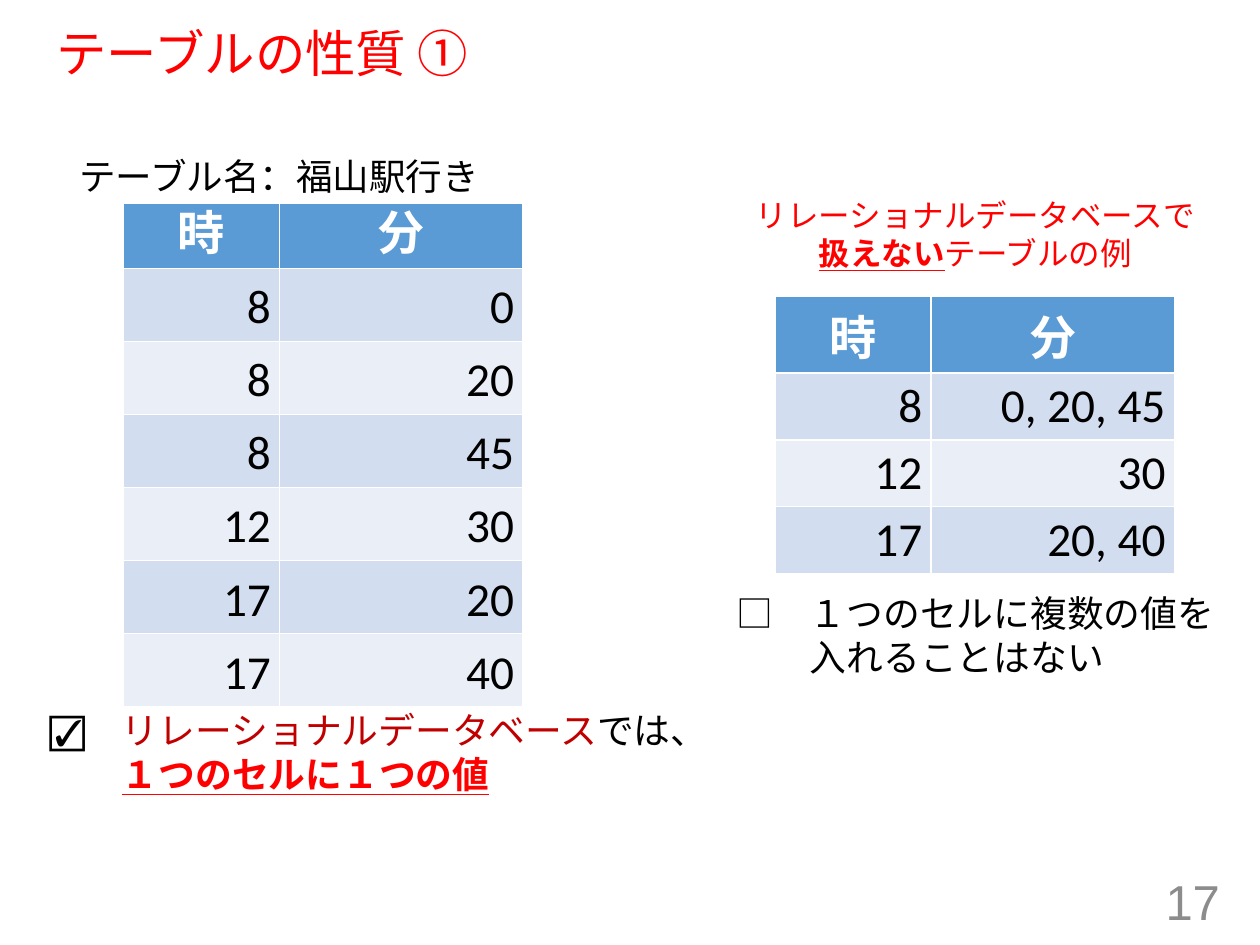
"""Build a slide on the single-value property of relational tables."""
from pptx import Presentation
from pptx.dml.color import RGBColor
from pptx.enum.text import MSO_ANCHOR, PP_ALIGN
from pptx.oxml.ns import qn
from pptx.util import Inches, Pt
from lxml import etree

LEFT, CENTER, RIGHT = PP_ALIGN.LEFT, PP_ALIGN.CENTER, PP_ALIGN.RIGHT
TOP, MIDDLE = MSO_ANCHOR.TOP, MSO_ANCHOR.MIDDLE
BLACK = RGBColor(0x00, 0x00, 0x00)
WHITE = RGBColor(0xFF, 0xFF, 0xFF)
RED = RGBColor(0xFF, 0x00, 0x00)
DARK_RED = RGBColor(0xC0, 0x00, 0x00)
GRAY = RGBColor(0x8C, 0x8C, 0x8C)
HEADER_BLUE = RGBColor(0x5B, 0x9B, 0xD5)
BANDS = [RGBColor(0xD2, 0xDE, 0xEF), RGBColor(0xEA, 0xEF, 0xF7)]
CJK = "Noto Sans CJK JP"


def add_span(para, text, size, font, color, strong=False, underline=False):
    span = para.add_run()
    span.text = text
    span.font.size = Pt(size)
    span.font.name = font
    span.font.bold = strong
    span.font.underline = underline
    span.font.color.rgb = color
    east_asian = etree.SubElement(span.font._element, qn("a:ea"))
    east_asian.set("typeface", CJK)


def add_box(place, lines, size, font, align=LEFT, anchor=TOP):
    box = slide.shapes.add_textbox(*(Inches(length) for length in place))
    frame = box.text_frame
    frame.word_wrap = True
    frame.vertical_anchor = anchor
    for index, line in enumerate(lines):
        para = frame.add_paragraph() if index else frame.paragraphs[0]
        para.alignment = align
        for text, color, *style in line:
            add_span(para, text, size, font, color, *style)
    return frame


deck = Presentation()
deck.slide_width = Inches(10)
deck.slide_height = Inches(7.5)
slide = deck.slides.add_slide(deck.slide_layouts[6])

title = add_box((0.35, 0.19, 9.25, 0.51), [[("テーブルの性質 ①", RED)]],
                28.8, "Arial", anchor=MIDDLE)
title.paragraphs[0].line_spacing = 0.9
add_box((7.53, 6.95, 2.25, 0.4), [[("17", GRAY)]], 28, "Arial", RIGHT, MIDDLE)

caption = add_box((0.56, 1.28, 3.57, 0.57), [[("テーブル名：福山駅行き", BLACK)]], 20.9, CJK)
caption.margin_left = caption.margin_right = Inches(0.07)
caption.margin_top = caption.margin_bottom = Inches(0.04)
caption.paragraphs[0].line_spacing = 0.7
caption.paragraphs[0].space_before = Pt(10)

add_box((5.87, 1.51, 3.74, 0.71),
        [[("リレーショナルデータベースで", RED)],
         [("扱えない", RED, True, True), ("テーブルの例", RED)]],
        18, "Calibri", CENTER)

forbidden_note = add_box((5.75, 4.64, 4.03, 0.81),
                         [[("□\t", BLACK), ("１つのセルに複数の値を", BLACK)],
                          [("入れることはない", BLACK)]], 21, CJK)
rule_note = add_box((0.29, 5.57, 5.6, 0.81),
                    [[("☑\t", BLACK), ("リレーショナルデータベース", DARK_RED), ("では、", BLACK)],
                     [("１つのセルに１つの値", RED, True, True)]], 21, CJK)
for note in (forbidden_note, rule_note):
    for para, indent in zip(note.paragraphs, (-0.58, 0)):
        properties = para._p.get_or_add_pPr()
        properties.set("marL", str(Inches(0.58)))
        properties.set("indent", str(Inches(indent)))

HEADINGS = ("時", "分")
timetable = [HEADINGS, ("8", "0"), ("8", "20"), ("8", "45"),
             ("12", "30"), ("17", "20"), ("17", "40")]
grouped = [HEADINGS, ("8", "0, 20, 45"), ("12", "30"), ("17", "20, 40")]
tables = [
    (6.15, 2.35, grouped, 0.61, 0.53, None, None, 0.04),
    (0.98, 1.61, timetable, 0.52, 0.58, Pt(32), Pt(36), 0),
]
for left, top, rows, head_height, row_height, head_spacing, row_spacing, head_bottom in tables:
    height = head_height + row_height * (len(rows) - 1)
    table = slide.shapes.add_table(len(rows), 2, Inches(left), Inches(top),
                                   Inches(3.17), Inches(height)).table
    for column, width in zip(table.columns, (1.24, 1.93)):
        column.width = Inches(width)
    for row_index, values in enumerate(rows):
        header = row_index == 0
        table.rows[row_index].height = Inches(head_height if header else row_height)
        for column_index, value in enumerate(values):
            cell = table.cell(row_index, column_index)
            cell.margin_left = cell.margin_right = Inches(0.07)
            cell.margin_top = Inches(0.04)
            cell.margin_bottom = Inches(head_bottom if header else 0.04)
            cell.fill.solid()
            cell.fill.fore_color.rgb = HEADER_BLUE if header else BANDS[(row_index - 1) % 2]
            para = cell.text_frame.paragraphs[0]
            para.alignment = CENTER if header else RIGHT
            para.line_spacing = head_spacing if header else row_spacing
            add_span(para, value, 27, "Calibri", WHITE if header else BLACK, header)

deck.save("out.pptx")
